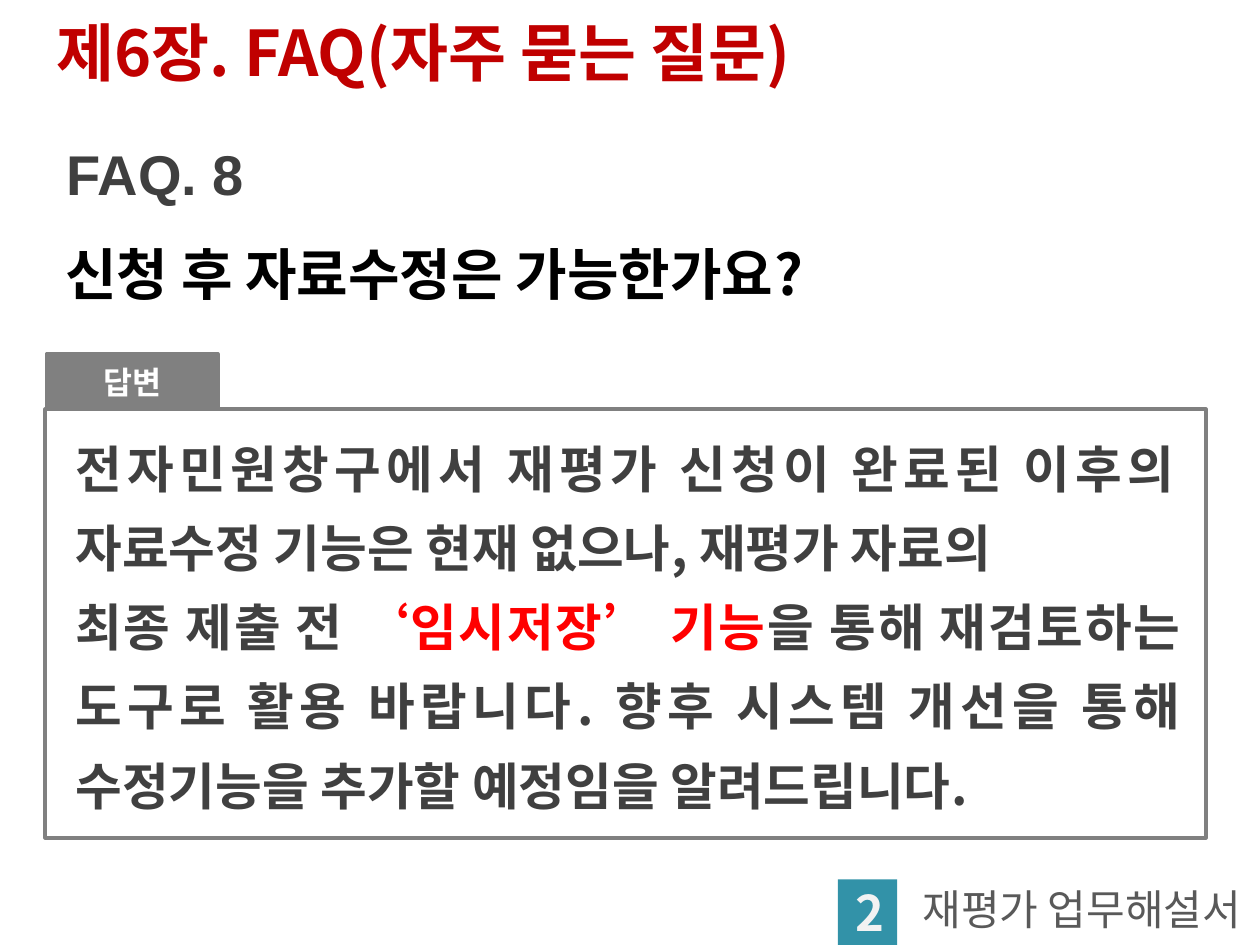
from dataclasses import dataclass, field
from typing import Optional

from pptx import Presentation
from pptx.dml.color import RGBColor
from pptx.enum.shapes import MSO_SHAPE
from pptx.enum.text import MSO_ANCHOR, PP_ALIGN
from pptx.oxml.ns import qn
from pptx.util import Inches, Pt

COLS, ROWS = 100, 75
KOREAN = "Noto Sans CJK KR"
GRAY, DARK = "808080", "404040"


@dataclass
class Run:
    text: str
    size: float
    color: str
    font: str = KOREAN
    bold: bool = True


@dataclass
class Block:
    col: float
    row: float
    cols: float
    rows: float
    paragraphs: list = field(default_factory=list)
    format: dict = field(default_factory=dict)
    indent: float = 0
    box: bool = False
    fill: Optional[str] = None
    line: Optional[str] = None
    weight: float = 0


def rgb(value: str) -> RGBColor:
    return RGBColor.from_string(value)


def add_run(p, run: Run) -> None:
    for i, part in enumerate(run.text.split("\n")):
        if i:
            p.add_line_break()
        r = p.add_run()
        r.text = part
        for name, value in {"name": run.font, "size": Pt(run.size), "bold": run.bold}.items():
            setattr(r.font, name, value)
        r.font.color.rgb = rgb(run.color)
        ea = r.font._element.makeelement(qn("a:ea"), {"typeface": run.font})
        r.font._element.find(qn("a:latin")).addnext(ea)


def add_block(prs, s, b: Block) -> None:
    x, w = (int(prs.slide_width * v / COLS) for v in (b.col, b.cols))
    y, h = (int(prs.slide_height * v / ROWS) for v in (b.row, b.rows))
    if b.box:
        sp = s.shapes.add_shape(MSO_SHAPE.RECTANGLE, x, y, w, h)
        sp.shadow.inherit = False
    else:
        sp = s.shapes.add_textbox(x, y, w, h)
    if b.fill:
        sp.fill.solid()
        sp.fill.fore_color.rgb = rgb(b.fill)
    else:
        sp.fill.background()
    if b.line:
        sp.line.color.rgb = rgb(b.line)
        sp.line.width = Pt(b.weight)
    else:
        sp.line.fill.background()
    tf = sp.text_frame
    tf.word_wrap = True
    tf.vertical_anchor = MSO_ANCHOR.MIDDLE if b.box else MSO_ANCHOR.TOP
    for i, runs in enumerate(b.paragraphs):
        p = tf.add_paragraph() if i else tf.paragraphs[0]
        for name, value in b.format.items():
            setattr(p, name, value)
        if b.indent:
            p.level = 1
            pPr = p._p.get_or_add_pPr()
            pPr.set("marL", str(Inches(b.indent)))
            pPr.set("indent", "0")
        for run in runs:
            add_run(p, run)


ANSWER = [
    [Run("전자민원창구에서 재평가 신청이 완료된 이후의\n자료수정 기능은 현재 없으나, 재평가 자료의 ", 29, DARK)],
    [
        Run("최종 제출 전 ", 29, DARK),
        Run("‘임시저장’ 기능", 29, "FF0000"),
        Run("을 통해 재검토하는 도구로 활용 바랍니다. 향후 시스템 개선을 통해 "
            "수정기능을 추가할 예정임을 알려드립니다.", 29, DARK),
    ],
]

BLOCKS = [
    Block(70.5, 70.1, 30.7, 4.6, [[Run("재평가 업무해설서", 24, "595959", bold=False)]],
          {"alignment": PP_ALIGN.CENTER, "line_spacing": 0.9}),
    Block(66.5, 69.8, 4.7, 5.2, [[Run("2", 28, "F2F2F2")]],
          {"alignment": PP_ALIGN.RIGHT}, box=True, fill="3292A8"),
    Block(3.5, 1.3, 88.2, 11, [[Run("제6장. FAQ(자주 묻는 질문)", 36, "C00000")]],
          {"line_spacing": 0.9}),
    Block(4.3, 10.6, 74.4, 6.4, [[Run("FAQ. 8", 32, "3F3F3F", "Arial")]]),
    Block(4.2, 18.5, 91.4, 6.4, [[Run("신청 후 자료수정은 가능한가요?", 32, "000000")]]),
    Block(0, 32.8, 94.7, 32.7, ANSWER,
          {"alignment": PP_ALIGN.JUSTIFY, "line_spacing": 1.3}, indent=0.5),
    Block(3.6, 32.5, 92.1, 34, box=True, line=GRAY, weight=2.25),
    Block(3.7, 28.1, 13.6, 4.4, [[Run("답변", 18, "FFFFFF")]],
          {"alignment": PP_ALIGN.CENTER}, box=True, fill=GRAY, line=GRAY, weight=2),
]


def main() -> None:
    prs = Presentation()
    prs.slide_width, prs.slide_height = Inches(10), Inches(7.5)
    s = prs.slides.add_slide(prs.slide_layouts[6])
    for block in BLOCKS:
        add_block(prs, s, block)
    prs.save("out.pptx")


if __name__ == "__main__":
    main()
